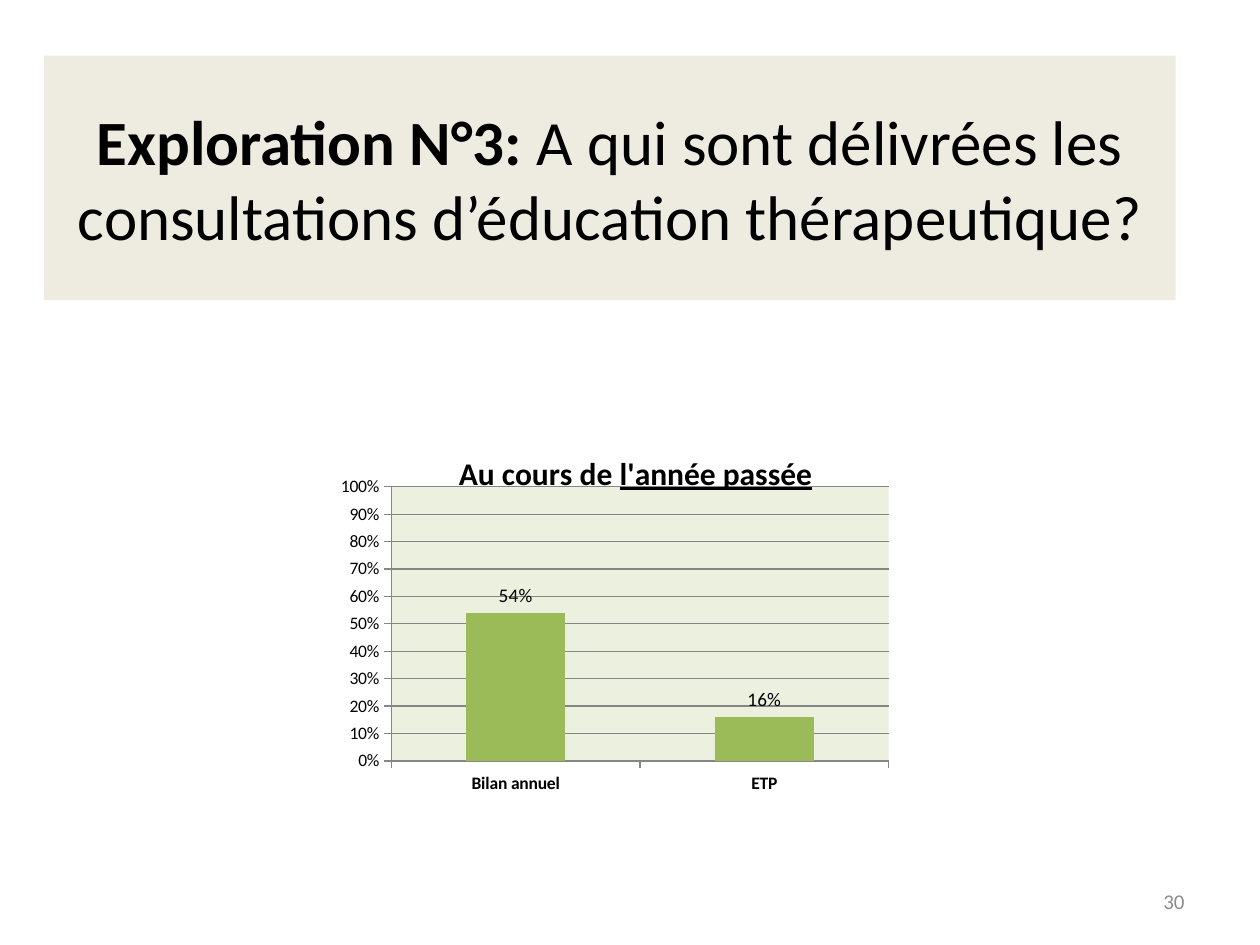
from dataclasses import dataclass

from lxml import etree
from pptx import Presentation
from pptx.chart.data import CategoryChartData
from pptx.dml.color import RGBColor
from pptx.enum.chart import XL_CHART_TYPE, XL_LABEL_POSITION, XL_TICK_MARK
from pptx.enum.shapes import MSO_SHAPE
from pptx.enum.text import MSO_ANCHOR, PP_ALIGN
from pptx.oxml import parse_xml
from pptx.oxml.ns import nsdecls, qn
from pptx.util import Cm, Pt

COLUMN = XL_CHART_TYPE.COLUMN_CLUSTERED
OUTER = XL_LABEL_POSITION.OUTSIDE_END
TICK = XL_TICK_MARK.OUTSIDE
RECT = MSO_SHAPE.RECTANGLE
MIDDLE = MSO_ANCHOR.MIDDLE
CENTER, RIGHT = PP_ALIGN.CENTER, PP_ALIGN.RIGHT


@dataclass(frozen=True)
class Theme:
    font: str = "Calibri"
    ink: str = "000000"
    gray: str = "8C8C8C"
    line: str = "868686"
    sand: str = "EEECE1"
    plot: str = "EBF1DE"
    bar: str = "9BBB59"
    head: int = 36
    title: int = 18
    page: int = 12
    label: int = 11
    axis: int = 10


THEME = Theme()


def rgb(code):
    return RGBColor.from_string(code)


def style(font, size, color=THEME.ink, bold=None):
    font.name = THEME.font
    font.size = Pt(size)
    font.color.rgb = rgb(color)
    font.bold = bold


def add_head(slide, lead, rest):
    box = slide.shapes.add_shape(RECT, Cm(0.89), Cm(1.12), Cm(22.81), Cm(4.93))
    box.shadow.inherit = False
    box.fill.solid()
    box.fill.fore_color.rgb = rgb(THEME.sand)
    box.line.fill.background()
    frame = box.text_frame
    frame.word_wrap = True
    frame.vertical_anchor = MIDDLE
    para = frame.paragraphs[0]
    para.alignment = CENTER
    style(para.font, THEME.head)
    for text, bold in ((lead, True), (rest, False)):
        run = para.add_run()
        run.text = text
        run.font.bold = bold


def add_page(slide, text):
    box = slide.shapes.add_textbox(Cm(18.21), Cm(17.65), Cm(5.92), Cm(1.02))
    frame = box.text_frame
    frame.word_wrap = True
    frame.vertical_anchor = MIDDLE
    para = frame.paragraphs[0]
    para.text = text
    para.alignment = RIGHT
    style(para.font, THEME.page, THEME.gray)


def set_layout(node, index, **values):
    for old in node.findall(qn("c:layout")):
        node.remove(old)
    layout = etree.Element(qn("c:layout"))
    manual = etree.SubElement(layout, qn("c:manualLayout"))
    for key, value in values.items():
        etree.SubElement(manual, qn(f"c:{key}"), val=str(value))
    node.insert(index, layout)


def set_axis(axis, bold):
    style(axis.tick_labels.font, THEME.axis, bold=bold)
    axis.major_tick_mark = TICK
    axis.format.line.color.rgb = rgb(THEME.line)


def set_title(chart, plain, marked):
    title = chart.chart_title
    para = title.text_frame.paragraphs[0]
    style(para.font, THEME.title, bold=True)
    for text, under in ((plain, False), (marked, True)):
        run = para.add_run()
        run.text = text
        style(run.font, THEME.title, bold=True)
        run.font.underline = under
    title.include_in_layout = False
    set_layout(title._element, 1, xMode="edge", yMode="edge", x=0.24, y=0.04)


def set_plot(chart):
    area = chart._chartSpace.chart.plotArea
    set_layout(area, 0, layoutTarget="inner", xMode="edge", yMode="edge",
               x=0.14, y=0.143, w=0.783, h=0.735)
    area.append(parse_xml(
        f'<c:spPr {nsdecls("c", "a")}><a:solidFill>'
        f'<a:srgbClr val="{THEME.plot}"/></a:solidFill></c:spPr>'))


def add_bars(slide, rates):
    data = CategoryChartData(number_format="0%")
    data.categories = list(rates)
    data.add_series("Series 1", list(rates.values()))
    chart = slide.shapes.add_chart(
        COLUMN, Cm(6.1), Cm(8.74), Cm(12.8), Cm(7.52), data).chart
    style(chart.font, THEME.axis)
    chart.has_legend = False
    set_title(chart, "Au cours de ", "l'année passée")

    set_axis(chart.category_axis, True)
    scale = chart.value_axis
    set_axis(scale, False)
    scale.minimum_scale, scale.maximum_scale, scale.major_unit = 0, 1, 0.1
    scale.tick_labels.number_format = "0%"
    scale.tick_labels.number_format_is_linked = False
    scale.major_gridlines.format.line.color.rgb = rgb(THEME.line)

    plot = chart.plots[0]
    plot.gap_width = 150
    plot.vary_by_categories = False
    fill = plot.series[0].format.fill
    fill.solid()
    fill.fore_color.rgb = rgb(THEME.bar)
    plot.has_data_labels = True
    labels = plot.data_labels
    labels.show_value = True
    labels.position = OUTER
    labels.number_format = "0%"
    labels.number_format_is_linked = False
    style(labels.font, THEME.label)
    set_plot(chart)


def main():
    deck = Presentation()
    deck.slide_width, deck.slide_height = Cm(25.4), Cm(19.05)
    slide = deck.slides.add_slide(deck.slide_layouts[6])
    add_head(slide, "Exploration N°3: ",
             "A qui sont délivrées les consultations d’éducation thérapeutique?")
    add_page(slide, "30")
    add_bars(slide, {"Bilan annuel": 0.54, "ETP": 0.16})
    deck.save("out.pptx")


if __name__ == "__main__":
    main()
